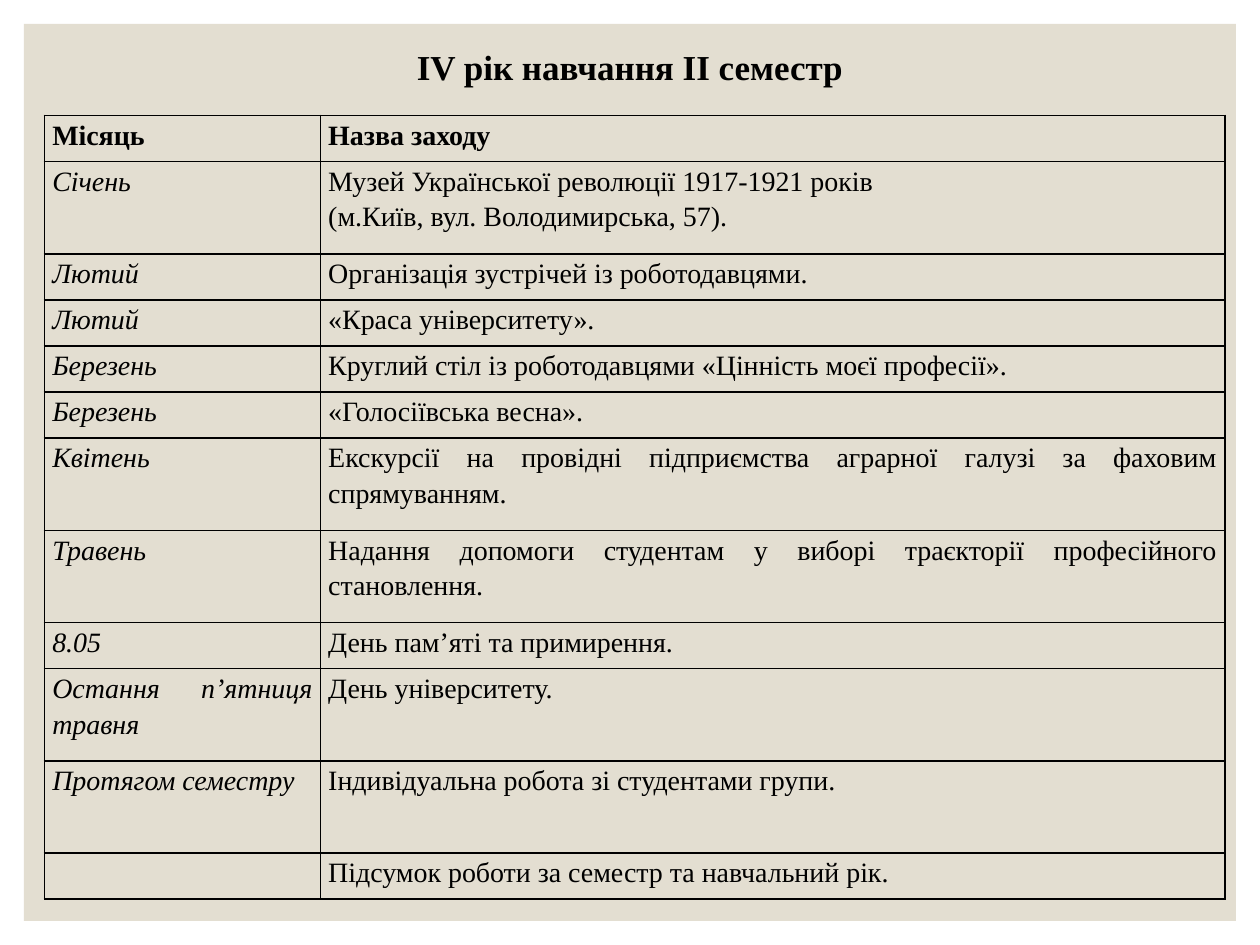
from dataclasses import dataclass
from typing import Any

from lxml.etree import SubElement
from pptx import Presentation
from pptx.dml.color import RGBColor
from pptx.enum.shapes import MSO_SHAPE
from pptx.enum.text import MSO_ANCHOR, PP_ALIGN
from pptx.oxml.ns import qn
from pptx.util import Pt

COLOURS = {"panel": "E3DED1", "ink": "000000"}
FONT_NAME = "Times New Roman"
ROW_UNIT = 26.35
COLUMN_WIDTHS = (157.7, 517)
BORDER_WIDTH = 1
TABLE_FLAGS = {"first_row": False, "horz_banding": False}
CELL_FORMAT = {
    "margin_left": Pt(4.5),
    "margin_right": Pt(4.5),
    "margin_top": Pt(0),
    "margin_bottom": Pt(0),
    "vertical_anchor": MSO_ANCHOR.TOP,
}
CELL_PARA = {"alignment": PP_ALIGN.JUSTIFY, "line_spacing": 1.15}
TITLE_FRAME = {"word_wrap": True, "vertical_anchor": MSO_ANCHOR.MIDDLE}
TITLE_PARA = {"alignment": PP_ALIGN.CENTER, "line_spacing": 0.9}
TITLE_FONT = {"name": FONT_NAME, "size": Pt(20), "bold": True}
BODY_FONT = {"name": FONT_NAME, "size": Pt(16), "bold": False}
HEADER_FONT = {**BODY_FONT, "bold": True}
MONTH_FONT = {**BODY_FONT, "italic": True}


@dataclass
class Activity:
    month: str
    name: str
    units: int = 1


ACTIVITIES = [
    Activity("Місяць", "Назва заходу"),
    Activity(
        "Січень",
        "Музей Української революції 1917-1921 років\n"
        "(м.Київ, вул. Володимирська, 57).",
        2,
    ),
    Activity("Лютий", "Організація зустрічей із роботодавцями."),
    Activity("Лютий", "«Краса університету»."),
    Activity("Березень", "Круглий стіл із роботодавцями «Цінність моєї професії»."),
    Activity("Березень", "«Голосіївська весна»."),
    Activity(
        "Квітень",
        "Екскурсії на провідні підприємства аграрної галузі за фаховим спрямуванням.",
        2,
    ),
    Activity(
        "Травень",
        "Надання допомоги студентам у виборі траєкторії професійного становлення.",
        2,
    ),
    Activity("8.05", "День пам’яті та примирення."),
    Activity("Остання п’ятниця травня", "День університету.", 2),
    Activity("Протягом семестру", "Індивідуальна робота зі студентами групи.", 2),
    Activity("", "Підсумок роботи за семестр та навчальний рік."),
]


def apply_format(target: Any, values: dict[str, Any]) -> None:
    for name, value in values.items():
        setattr(target, name, value)


def write_text(
    frame: Any, text: str, para_format: dict[str, Any], font_format: dict[str, Any]
) -> None:
    frame.text = text
    for para in frame.paragraphs:
        apply_format(para, para_format)
        apply_format(para.font, font_format)
        for span in para.runs:
            apply_format(span.font, font_format)
            span.font.color.rgb = RGBColor.from_string(COLOURS["ink"])


def draw_borders(cell: Any) -> None:
    properties = cell._tc.get_or_add_tcPr()
    for side in ("lnL", "lnR", "lnT", "lnB"):
        line = SubElement(properties, qn(f"a:{side}"), w=str(Pt(BORDER_WIDTH)))
        fill = SubElement(line, qn("a:solidFill"))
        SubElement(fill, qn("a:srgbClr"), val=COLOURS["ink"])


def draw_cell(cell: Any, text: str, font_format: dict[str, Any]) -> None:
    apply_format(cell, CELL_FORMAT)
    write_text(cell.text_frame, text, CELL_PARA, font_format)
    draw_borders(cell)
    cell.fill.background()


def draw_panel(page: Any) -> None:
    panel = page.shapes.add_shape(
        MSO_SHAPE.RECTANGLE, Pt(13.7), Pt(13.7), Pt(692.6), Pt(512.6)
    )
    panel.shadow.inherit = False
    panel.fill.solid()
    panel.fill.fore_color.rgb = RGBColor.from_string(COLOURS["panel"])
    panel.line.fill.background()


def draw_title(page: Any, text: str) -> None:
    box = page.shapes.add_textbox(Pt(57.6), Pt(20.6), Pt(604.8), Pt(38.2))
    apply_format(box.text_frame, TITLE_FRAME)
    write_text(box.text_frame, text, TITLE_PARA, TITLE_FONT)


def draw_schedule(page: Any, activities: list[Activity]) -> None:
    height = ROW_UNIT * sum(activity.units for activity in activities)
    table = page.shapes.add_table(
        len(activities),
        len(COLUMN_WIDTHS),
        Pt(25.4),
        Pt(66),
        Pt(sum(COLUMN_WIDTHS)),
        Pt(height),
    ).table
    apply_format(table, TABLE_FLAGS)
    for column, width in zip(table.columns, COLUMN_WIDTHS):
        column.width = Pt(width)
    for index, activity in enumerate(activities):
        table.rows[index].height = Pt(ROW_UNIT * activity.units)
        fonts = (MONTH_FONT, BODY_FONT) if index else (HEADER_FONT, HEADER_FONT)
        draw_cell(table.cell(index, 0), activity.month, fonts[0])
        draw_cell(table.cell(index, 1), activity.name, fonts[1])


def main() -> None:
    deck = Presentation()
    apply_format(deck, {"slide_width": Pt(720), "slide_height": Pt(540)})
    page = deck.slides.add_slide(deck.slide_layouts[6])
    draw_panel(page)
    draw_title(page, "ІV рік навчання ІІ семестр")
    draw_schedule(page, ACTIVITIES)
    deck.save("out.pptx")


if __name__ == "__main__":
    main()
